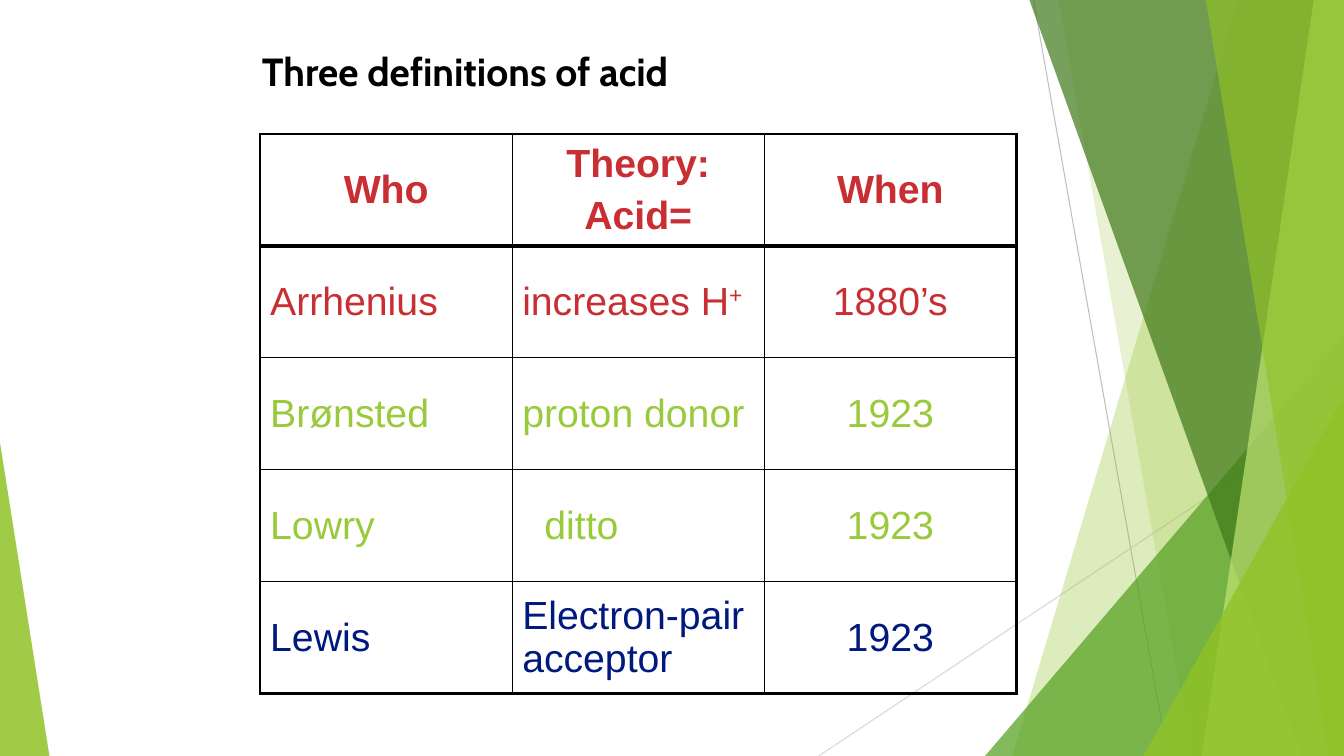
"""Build the slide on three definitions of acid."""
from lxml.etree import SubElement
from pptx import Presentation
from pptx.dml.color import RGBColor
from pptx.enum.shapes import MSO_CONNECTOR, MSO_SHAPE
from pptx.enum.text import MSO_ANCHOR, PP_ALIGN
from pptx.oxml.ns import qn
from pptx.util import Inches, Pt

TITLE = "Three definitions of acid"
ROWS = [
    ("red", ["Who", "Theory:\nAcid=", "When"]),
    ("red", ["Arrhenius", "increases H+", "1880’s"]),
    ("green", ["Brønsted", "proton donor", "1923"]),
    ("green", ["Lowry", "ditto", "1923"]),
    ("navy", ["Lewis", "Electron-pair acceptor", "1923"]),
]
COLORS = {
    "black": "000000", "red": "C82E32", "green": "99CA3C", "navy": "00197D",
    "lime": "90C226", "leaf": "54A021", "forest": "3F7819", "pale": "C0E474",
    "gray": "BFBFBF", "light gray": "D9D9D9",
}
WIDTH, HEIGHT = 13.33, 7.5
HAIRLINES = [
    ((10.25, 0), (11.58, HEIGHT), "gray"),
    ((WIDTH, 4.03), (8.12, HEIGHT), "light gray"),
]
# Each band gives its top and bottom left x; each triangle its box and apex.
DECOR = [
    ("band", (12.28, 10.04), "lime", 30),
    ("band", (10.5, 11.82), "lime", 20),
    ("triangle", (9.77, 3.33, 3.56, 1), "leaf", 72),
    ("band", (10.21, 12.91), "forest", 70),
    ("band", (13.03, 11.92), "pale", 70),
    ("band", (11.96, 13.18), "lime", 65),
    ("triangle", (11.34, 3.93, 1.99, 1), "lime", 80),
    ("triangle", (0, 4.39, 0.49, 0), "lime", 85),
]
TABLE_LEFT, TABLE_TOP, COLUMN_WIDTH, ROW_HEIGHT = 2.58, 1.33, 2.5, 1.11
THIN, OUTER, HEADER = 1, 2.25, 3


def rgb(name):
    return RGBColor.from_string(COLORS[name])


def add_hairline(slide, start, end, color):
    line = slide.shapes.add_connector(
        MSO_CONNECTOR.STRAIGHT, *[Inches(value) for value in start + end])
    line.line.color.rgb = rgb(color)
    line.line.width = Pt(0.75)
    SubElement(line._element.spPr, qn("a:effectLst"))


def add_decor(slide, kind, geometry, color, opacity):
    if kind == "band":
        top_x, bottom_x = geometry
        corners = [(WIDTH, 0), (WIDTH, HEIGHT), (bottom_x, HEIGHT)]
        builder = slide.shapes.build_freeform(Inches(top_x), 0)
        builder.add_line_segments([(Inches(x), Inches(y)) for x, y in corners])
        shape = builder.convert_to_shape()
    else:
        left, top, width, apex = geometry
        shape = slide.shapes.add_shape(
            MSO_SHAPE.ISOSCELES_TRIANGLE, Inches(left), Inches(top),
            Inches(width), Inches(HEIGHT - top))
        shape.adjustments[0] = apex
    shape.shadow.inherit = False
    shape.line.fill.background()
    shape.fill.solid()
    shape.fill.fore_color.rgb = rgb(color)
    tint = shape._element.spPr.find(qn("a:solidFill"))[0]
    SubElement(tint, qn("a:alpha"), val=str(opacity * 1000))


def style_font(font, name, color, bold):
    font.name = name
    font.size = Pt(28)
    font.bold = bold
    font.color.rgb = rgb(color)


def set_borders(cell, row, column):
    last_row, last_column = len(ROWS) - 1, len(ROWS[0][1]) - 1
    widths = {
        "a:lnL": OUTER if column == 0 else THIN,
        "a:lnR": OUTER if column == last_column else THIN,
        "a:lnT": {0: OUTER, 1: HEADER}.get(row, THIN),
        "a:lnB": {0: HEADER, last_row: OUTER}.get(row, THIN),
    }
    properties = cell._tc.get_or_add_tcPr()
    for tag, width in widths.items():
        line = SubElement(properties, qn(tag), w=str(Pt(width)))
        fill = SubElement(line, qn("a:solidFill"))
        SubElement(fill, qn("a:srgbClr"), val=COLORS["black"])


def fill_cell(cell, text, color, row, column):
    set_borders(cell, row, column)
    cell.fill.background()
    cell.vertical_anchor = MSO_ANCHOR.MIDDLE
    if text == "ditto":
        cell.margin_left = Inches(0.32)
    cell.text_frame.text = text
    centred = row == 0 or column == 2
    for index, para in enumerate(cell.text_frame.paragraphs):
        para.alignment = PP_ALIGN.CENTER if centred else PP_ALIGN.LEFT
        if index:
            para.space_before = Pt(5.6)
        if text.endswith("+"):
            para.text = text[:-1]
            charge = para.add_run()
            charge.text = "+"
            charge.font._element.set("baseline", "30000")
        for span in para.runs:
            style_font(span.font, "Arial", color, row == 0)


def add_acid_table(slide):
    columns = len(ROWS[0][1])
    table = slide.shapes.add_table(
        len(ROWS), columns, Inches(TABLE_LEFT), Inches(TABLE_TOP),
        Inches(COLUMN_WIDTH * columns), Inches(ROW_HEIGHT * len(ROWS))).table
    table.first_row = table.horz_banding = False
    for row, (color, texts) in enumerate(ROWS):
        table.rows[row].height = Inches(ROW_HEIGHT)
        for column, text in enumerate(texts):
            fill_cell(table.cell(row, column), text, color, row, column)


def add_title(slide):
    box = slide.shapes.add_textbox(
        Inches(2.5), Inches(0.42), Inches(4.75), Inches(0.57))
    box.text_frame.word_wrap = False
    box.text_frame.text = TITLE
    style_font(box.text_frame.paragraphs[0].runs[0].font, "Cabin", "black", True)


def main():
    deck = Presentation()
    deck.slide_width, deck.slide_height = Inches(WIDTH), Inches(HEIGHT)
    page = deck.slides.add_slide(deck.slide_layouts[6])
    for hairline in HAIRLINES:
        add_hairline(page, *hairline)
    for piece in DECOR:
        add_decor(page, *piece)
    add_acid_table(page)
    add_title(page)
    deck.save("out.pptx")


if __name__ == "__main__":
    main()
